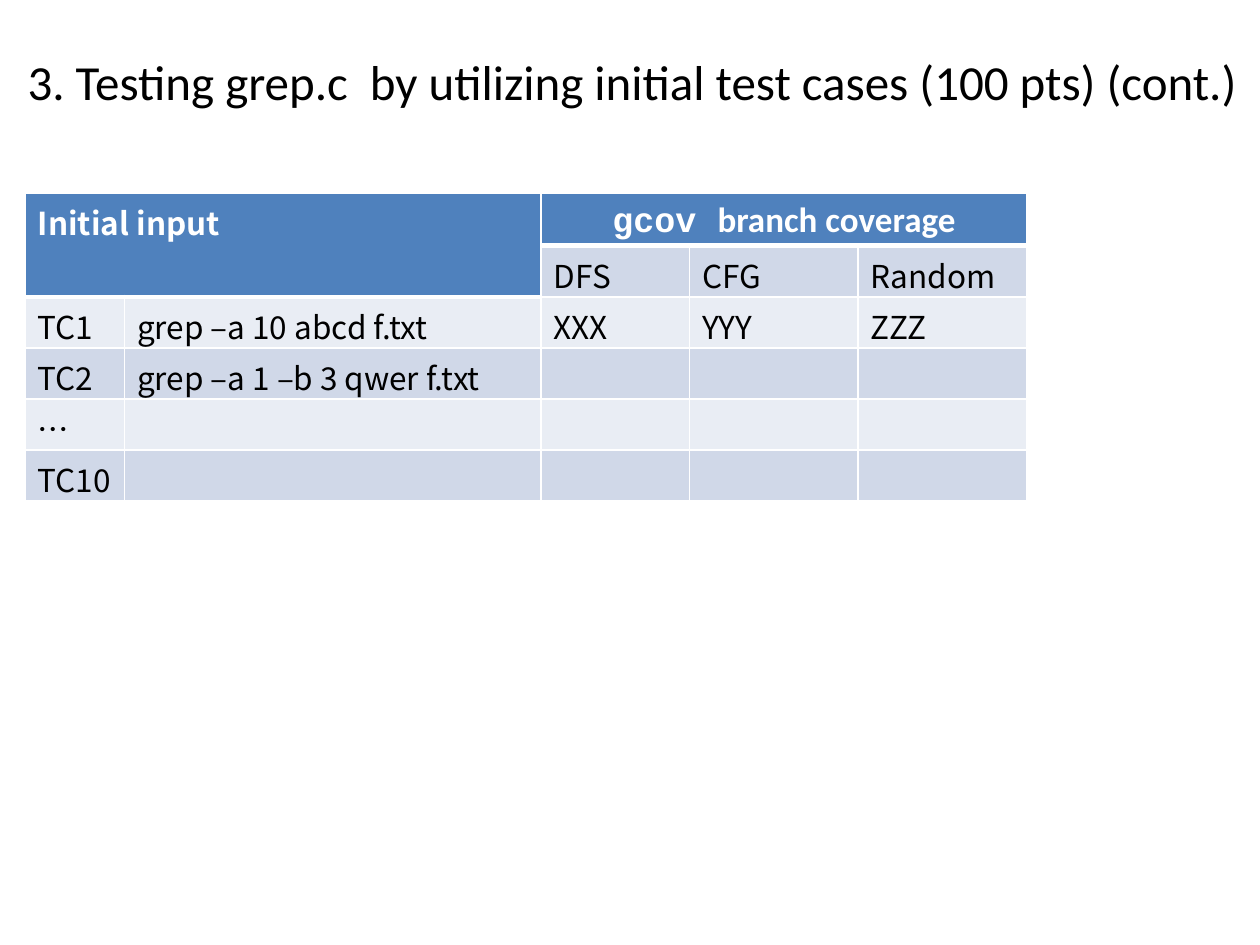
import dataclasses

import lxml.etree
import pptx
import pptx.dml.color
import pptx.enum.text
import pptx.oxml.ns
import pptx.util

Inches = pptx.util.Inches
Pt = pptx.util.Pt


@dataclasses.dataclass(frozen=True)
class Theme:
    """Colours, fonts and sizes of the slide."""
    ink: str = "000000"
    paper: str = "FFFFFF"
    header: str = "4F81BD"
    bands: tuple = ("D0D8E8", "E9EDF4")
    latin: str = "Calibri"
    body: str = "Noto Sans CJK KR"
    code: str = "Courier New"
    title_size: int = 28
    header_size: int = 20
    body_size: int = 18


THEME = Theme()
COLUMN_WIDTHS = (0.79, 3.31, 1.18, 1.34, 1.34)
ROW_HEIGHTS = (0.42,) + (0.405,) * 5
BODY_ROWS = (
    ("", "", "DFS", "CFG", "Random"),
    ("TC1", "grep –a 10 abcd f.txt", "XXX", "YYY", "ZZZ"),
    ("TC2", "grep –a 1 –b 3 qwer f.txt", "", "", ""),
    ("…", "", "", "", ""),
    ("TC10", "", "", "", ""),
)


def add_run(paragraph, text, font, size, colour, bold=False):
    """Append one styled run to a paragraph."""
    run = paragraph.add_run()
    run.text = text
    run.font.name = font
    run.font.size = Pt(size)
    run.font.bold = bold
    run.font.color.rgb = pptx.dml.color.RGBColor.from_string(colour)
    properties = run.font._element
    for tag in ("a:ea", "a:cs"):
        lxml.etree.SubElement(properties, pptx.oxml.ns.qn(tag), typeface=font)


def style_cell(cell, colour, bottom_width=1):
    """Give a cell its borders, fill and margins."""
    qn = pptx.oxml.ns.qn
    properties = cell._tc.get_or_add_tcPr()
    for side in "LRTB":
        width = bottom_width if side == "B" else 1
        border = lxml.etree.SubElement(properties, qn(f"a:ln{side}"), w=str(Pt(width)))
        fill = lxml.etree.SubElement(border, qn("a:solidFill"))
        lxml.etree.SubElement(fill, qn("a:srgbClr"), val=THEME.paper)
    cell.fill.solid()
    cell.fill.fore_color.rgb = pptx.dml.color.RGBColor.from_string(colour)
    cell.margin_bottom = 0


def add_title(slide, left, top, width, height):
    """Place the slide title in the given box."""
    frame = slide.shapes.add_textbox(left, top, width, height).text_frame
    frame.word_wrap = False
    add_run(frame.paragraphs[0],
            "3. Testing grep.c  by utilizing initial test cases (100 pts) (cont.)",
            THEME.latin, THEME.title_size, THEME.ink)


def add_coverage_table(slide, left, top, width, height):
    """Place the branch coverage table in the given box."""
    table = slide.shapes.add_table(
        len(ROW_HEIGHTS), len(COLUMN_WIDTHS), left, top, width, height).table
    for column, column_width in zip(table.columns, COLUMN_WIDTHS):
        column.width = int(width * column_width / sum(COLUMN_WIDTHS))
    for row, row_height in zip(table.rows, ROW_HEIGHTS):
        row.height = int(height * row_height / sum(ROW_HEIGHTS))

    for row_index in range(len(ROW_HEIGHTS)):
        for column_index in range(len(COLUMN_WIDTHS)):
            in_header = row_index == 0 or (row_index == 1 and column_index < 2)
            colour = THEME.header if in_header else THEME.bands[(row_index + 1) % 2]
            style_cell(table.cell(row_index, column_index), colour, 3 if in_header else 1)

    table.cell(0, 0).merge(table.cell(1, 1))
    table.cell(0, 2).merge(table.cell(0, 4))
    add_run(table.cell(0, 0).text_frame.paragraphs[0], "Initial input",
            THEME.body, THEME.body_size, THEME.paper, bold=True)
    coverage = table.cell(0, 2).text_frame.paragraphs[0]
    coverage.alignment = pptx.enum.text.PP_ALIGN.CENTER
    for text, font in (("gcov ", THEME.code), ("branch coverage", THEME.latin)):
        add_run(coverage, text, font, THEME.header_size, THEME.paper, bold=True)

    for row_index, texts in enumerate(BODY_ROWS, start=1):
        for column_index, text in enumerate(texts):
            if text:
                add_run(table.cell(row_index, column_index).text_frame.paragraphs[0],
                        text, THEME.body, THEME.body_size, THEME.ink)


def main():
    """Build and save the slide."""
    presentation = pptx.Presentation()
    presentation.slide_width, presentation.slide_height = Inches(10), Inches(7.5)
    slide = presentation.slides.add_slide(presentation.slide_layouts[6])
    add_title(slide, Inches(0.12), Inches(0.36), Inches(9.92), Inches(0.57))
    add_coverage_table(slide, Inches(0.2), Inches(1.53), Inches(7.95), Inches(2.45))
    presentation.save("out.pptx")


if __name__ == "__main__":
    main()
